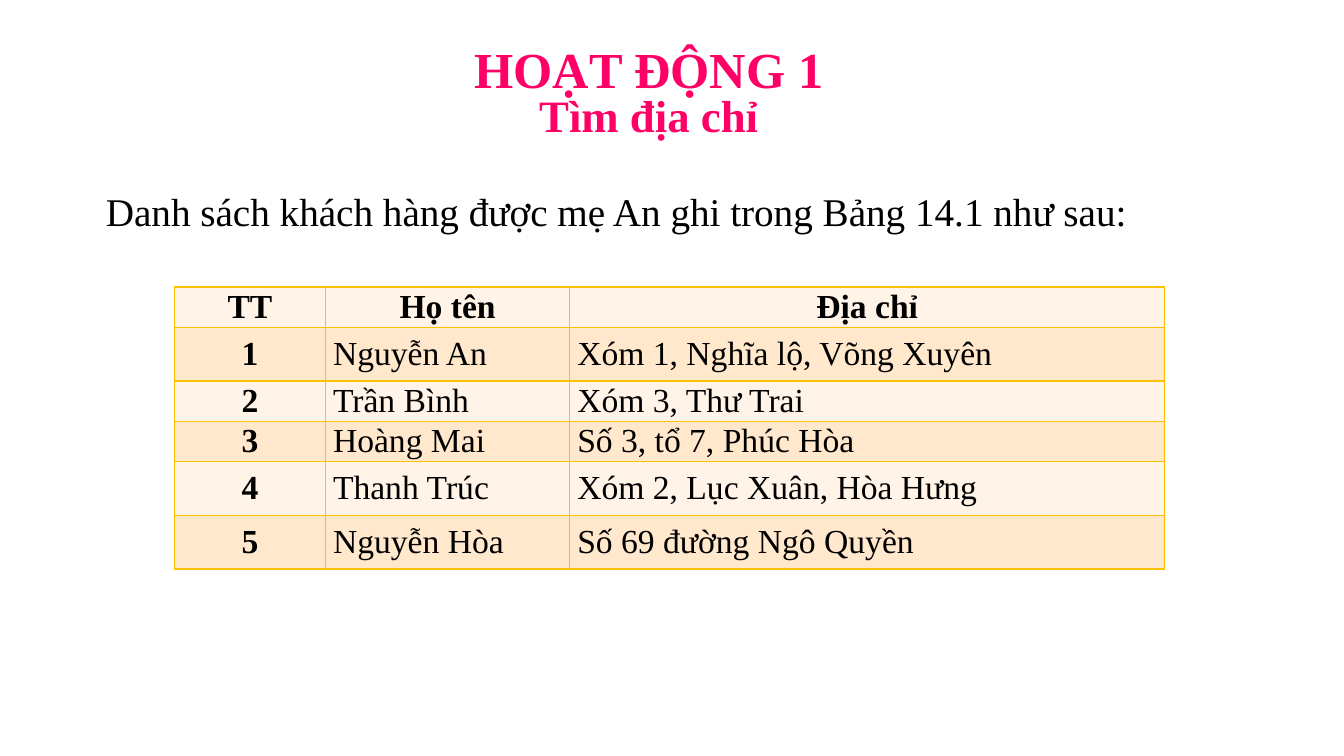
"""Build the customer list slide with its title, lead line and address table."""
from lxml import etree
from pptx import Presentation
from pptx.dml.color import RGBColor
from pptx.enum import text as t
from pptx.oxml import ns
from pptx.util import Pt

PINK = RGBColor(0xFF, 0x00, 0x66)
BLACK = RGBColor(0, 0, 0)
GOLD = RGBColor(0xFF, 0xC0, 0x00)
CREAM = RGBColor(0xFF, 0xF4, 0xE7)
PEACH = RGBColor(0xFF, 0xE8, 0xCC)
FACE = "Times New Roman"


def style(font, size, color, bold):
    font.name, font.size, font.bold = FACE, Pt(size), bold
    font.color.rgb = color


def edge(cell):
    props = cell._tc.get_or_add_tcPr()
    for i, side in enumerate(("lnL", "lnR", "lnT", "lnB")):
        line = etree.Element(ns.qn("a:" + side), w=str(Pt(1)))
        fill = etree.SubElement(line, ns.qn("a:solidFill"))
        etree.SubElement(fill, ns.qn("a:srgbClr"), val=str(GOLD))
        props.insert(i, line)


prs = Presentation()
prs.slide_width, prs.slide_height = Pt(960), Pt(540)
slide = prs.slides.add_slide(prs.slide_layouts[5])

title = slide.shapes.title
title.left, title.top, title.width, title.height = Pt(34.5), Pt(27.5), Pt(858), Pt(77)
frame = title.text_frame
frame.auto_size = t.MSO_AUTO_SIZE.NONE
frame.vertical_anchor = t.MSO_ANCHOR.BOTTOM
para = frame.paragraphs[0]
para.alignment = t.PP_ALIGN.CENTER
para.line_spacing = 0.8
for words, size in (("HOẠT ĐỘNG 1\v", 36), ("Tìm địa chỉ", 32)):
    run = para.add_run()
    run.text = words.rstrip("\v")
    style(run.font, size, PINK, True)
    if words.endswith("\v"):
        para.add_line_break()

lead = slide.shapes.add_textbox(Pt(68.5), Pt(125.5), Pt(790.5), Pt(46))
frame = lead.text_frame
frame.word_wrap = True
frame.auto_size = t.MSO_AUTO_SIZE.SHAPE_TO_FIT_TEXT
para = frame.paragraphs[0]
para.text = "Danh sách khách hàng được mẹ An ghi trong Bảng 14.1 như sau:"
para.alignment = t.PP_ALIGN.JUSTIFY
para.line_spacing = 1.15
para.space_before = para.space_after = Pt(6)
style(para.font, 28, BLACK, False)

rows = (
    ("TT", "Họ tên", "Địa chỉ"),
    ("1", "Nguyễn An", "Xóm 1, Nghĩa lộ, Võng Xuyên"),
    ("2", "Trần Bình", "Xóm 3, Thư Trai"),
    ("3", "Hoàng Mai", "Số 3, tổ 7, Phúc Hòa"),
    ("4", "Thanh Trúc", "Xóm 2, Lục Xuân, Hòa Hưng"),
    ("5", "Nguyễn Hòa", "Số 69 đường Ngô Quyền"),
)
wide = (108, 174.5, 425)
tall = (28.6, 38.3, 28.6, 28.6, 38.3, 38.3)
table = slide.shapes.add_table(
    len(rows), len(wide), Pt(124.5), Pt(205), Pt(sum(wide)), Pt(sum(tall))).table
for col, width in zip(table.columns, wide):
    col.width = Pt(width)
for r, row in enumerate(rows):
    table.rows[r].height = Pt(tall[r])
    for c, words in enumerate(row):
        cell = table.cell(r, c)
        cell.fill.solid()
        cell.fill.fore_color.rgb = PEACH if r % 2 else CREAM
        cell.vertical_anchor = t.MSO_ANCHOR.MIDDLE
        cell.margin_left = cell.margin_right = Pt(5.4)
        cell.margin_top = cell.margin_bottom = 0
        edge(cell)
        head = r == 0 or c == 0
        para = cell.text_frame.paragraphs[0]
        para.text = words
        para.alignment = t.PP_ALIGN.CENTER if head else t.PP_ALIGN.JUSTIFY
        style(para.font, 24, BLACK, head)

prs.save("out.pptx")
